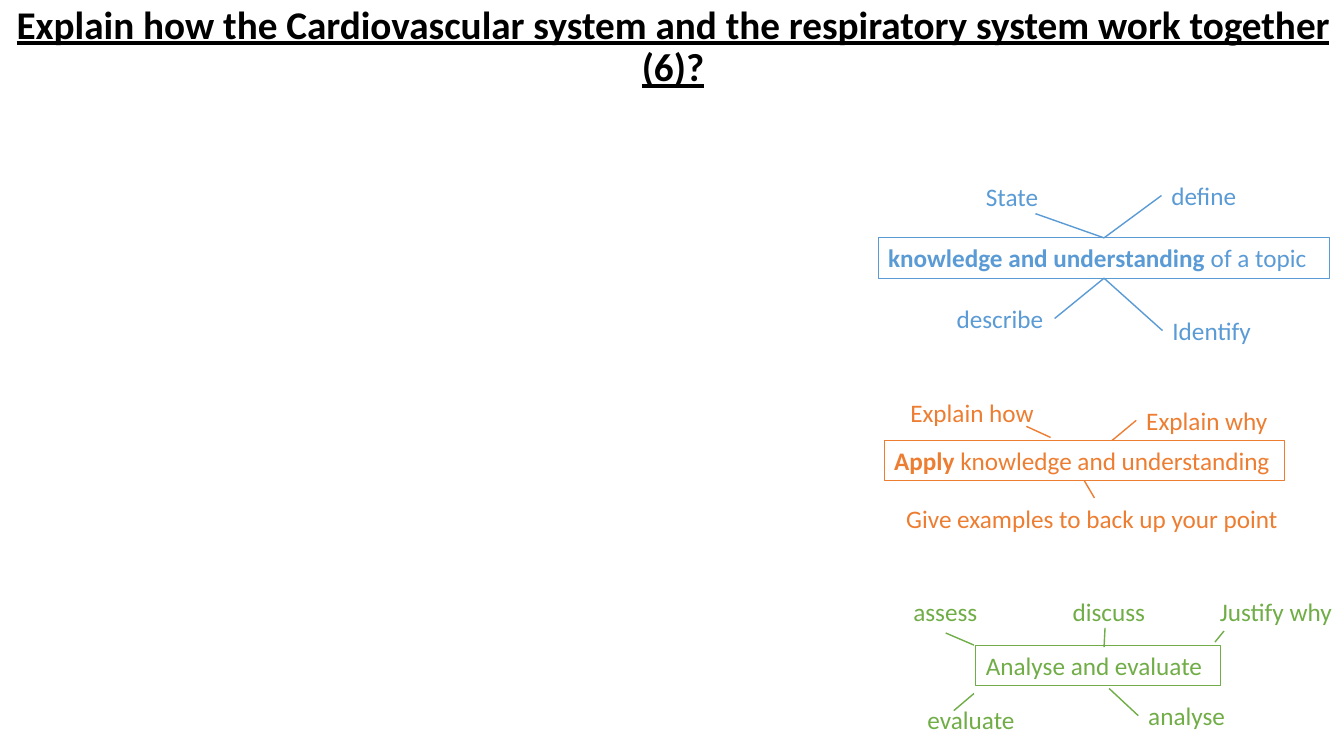
from dataclasses import dataclass
from typing import Optional

from lxml.etree import SubElement
from pptx import Presentation
from pptx.dml.color import RGBColor
from pptx.enum.shapes import MSO_CONNECTOR as Connector
from pptx.enum.text import MSO_ANCHOR as Anchor, MSO_AUTO_SIZE as AutoSize, PP_ALIGN as Align
from pptx.oxml.ns import qn
from pptx.util import Inches, Pt

FONT = "Calibri"
BLACK, BLUE, ORANGE, GREEN = "000000", "5B9BD5", "ED7D31", "70AD47"
BOX_HEIGHT = 0.4
TOP, LEFT, BOTTOM, RIGHT = range(4)


@dataclass
class Branch:
    """A command word and the line that leads to it from its skill."""
    word: str
    left: float
    top: float
    width: float
    start: tuple[float, float]
    end: tuple[float, float]
    skill_side: Optional[int] = None
    word_side: Optional[int] = None


@dataclass
class Skill:
    """A boxed skill; each run is its text and whether it is bold."""
    runs: list[tuple[str, bool]]
    left: float
    top: float
    width: float
    color: str
    branches: list[Branch]
    justified: bool = False


SKILLS = [
    Skill([("knowledge and understanding ", True), ("of a topic", False)],
          8.71, 2.36, 4.48, BLUE, [
              Branch("State", 9.68, 1.75, 0.72, (10.95, 2.36), (10.27, 2.12), TOP),
              Branch("define", 11.52, 1.74, 0.85, (10.95, 2.36), (11.52, 1.94), TOP, LEFT),
              Branch("describe", 9.39, 2.96, 1.07, (10.95, 2.76), (10.47, 3.17), BOTTOM, RIGHT),
              Branch("Identify", 11.53, 3.08, 1.05, (10.95, 2.76), (11.53, 3.28), BOTTOM, LEFT),
          ], justified=True),
    Skill([("Apply", True), (" knowledge and understanding", False)],
          8.77, 4.37, 3.97, ORANGE, [
              Branch("Explain how", 8.93, 3.89, 1.44, (10.42, 4.34), (10.18, 4.23)),
              Branch("Explain why", 11.27, 3.97, 1.42, (11.03, 4.37), (11.27, 4.17),
                     word_side=LEFT),
              Branch("Give examples to back up your point", 8.89, 4.94, 3.93,
                     (10.75, 4.77), (10.85, 4.94), BOTTOM, TOP),
          ]),
    Skill([("Analyse and evaluate", False)],
          9.68, 6.4, 2.43, GREEN, [
              Branch("assess", 8.96, 5.87, 0.84, (9.66, 6.4), (9.38, 6.28)),
              Branch("discuss", 10.54, 5.87, 0.93, (10.95, 6.42), (10.96, 6.23)),
              Branch("Justify why", 12, 5.87, 1.33, (12.05, 6.37), (12.14, 6.26)),
              Branch("evaluate", 9.1, 6.94, 1.08, (9.66, 6.88), (9.46, 7.05)),
              Branch("analyse", 11.29, 6.9, 0.97, (11, 6.83), (11.29, 7.1), word_side=LEFT),
          ]),
]


def rgb(color: str) -> RGBColor:
    return RGBColor.from_string(color)


def add_run(paragraph, text: str, size: float, color: str, bold: bool = False):
    run = paragraph.add_run()
    run.text = text
    run.font.name = FONT
    run.font.size = Pt(size)
    run.font.bold = bold
    run.font.color.rgb = rgb(color)
    return run


def add_label(shapes, runs: list[tuple[str, bool]], left: float, top: float,
              width: float, color: str):
    label = shapes.add_textbox(Inches(left), Inches(top), Inches(width), Inches(BOX_HEIGHT))
    label.text_frame.word_wrap = False
    label.text_frame.auto_size = AutoSize.SHAPE_TO_FIT_TEXT
    for text, bold in runs:
        add_run(label.text_frame.paragraphs[0], text, 18, color, bold)
    return label


def add_branch(shapes, branch: Branch, skill_box, color: str) -> None:
    word = add_label(shapes, [(branch.word, False)], branch.left, branch.top,
                     branch.width, color)
    line = shapes.add_connector(Connector.STRAIGHT, *map(Inches, branch.start + branch.end))
    line.line.color.rgb = rgb(color)
    line.line.width = Pt(1)
    SubElement(line._element.spPr, qn("a:effectLst"))
    if branch.skill_side is not None:
        line.begin_connect(skill_box, branch.skill_side)
    if branch.word_side is not None:
        line.end_connect(word, branch.word_side)


def add_skill(shapes, skill: Skill) -> None:
    box = add_label(shapes, skill.runs, skill.left, skill.top, skill.width, skill.color)
    box.line.color.rgb = rgb(skill.color)
    box.line.width = Pt(0.75)
    if skill.justified:
        box.text_frame.word_wrap = True
        box.text_frame.paragraphs[0].alignment = Align.JUSTIFY
    for branch in skill.branches:
        add_branch(shapes, branch, box, skill.color)


def add_question(slide) -> None:
    question = slide.shapes.title
    question.left, question.top = Inches(0.01), Inches(0.01)
    question.width, question.height = Inches(13.33), Inches(0.93)
    frame = question.text_frame
    frame.auto_size = AutoSize.NONE
    frame.vertical_anchor = Anchor.MIDDLE
    paragraph = frame.paragraphs[0]
    paragraph.alignment = Align.CENTER
    paragraph.line_spacing = 0.9
    run = add_run(paragraph, "Explain how the Cardiovascular system and the respiratory "
                  "system work together (6)?", 28, BLACK, bold=True)
    run.font.underline = True


def main() -> None:
    deck = Presentation()
    deck.slide_width, deck.slide_height = Inches(13.33), Inches(7.5)
    slide = deck.slides.add_slide(deck.slide_layouts[5])

    # Exam question
    add_question(slide)

    # Skills with their command words
    skill_map = slide.shapes.add_group_shape()
    for skill in SKILLS:
        add_skill(skill_map.shapes, skill)

    deck.save("out.pptx")


if __name__ == "__main__":
    main()
